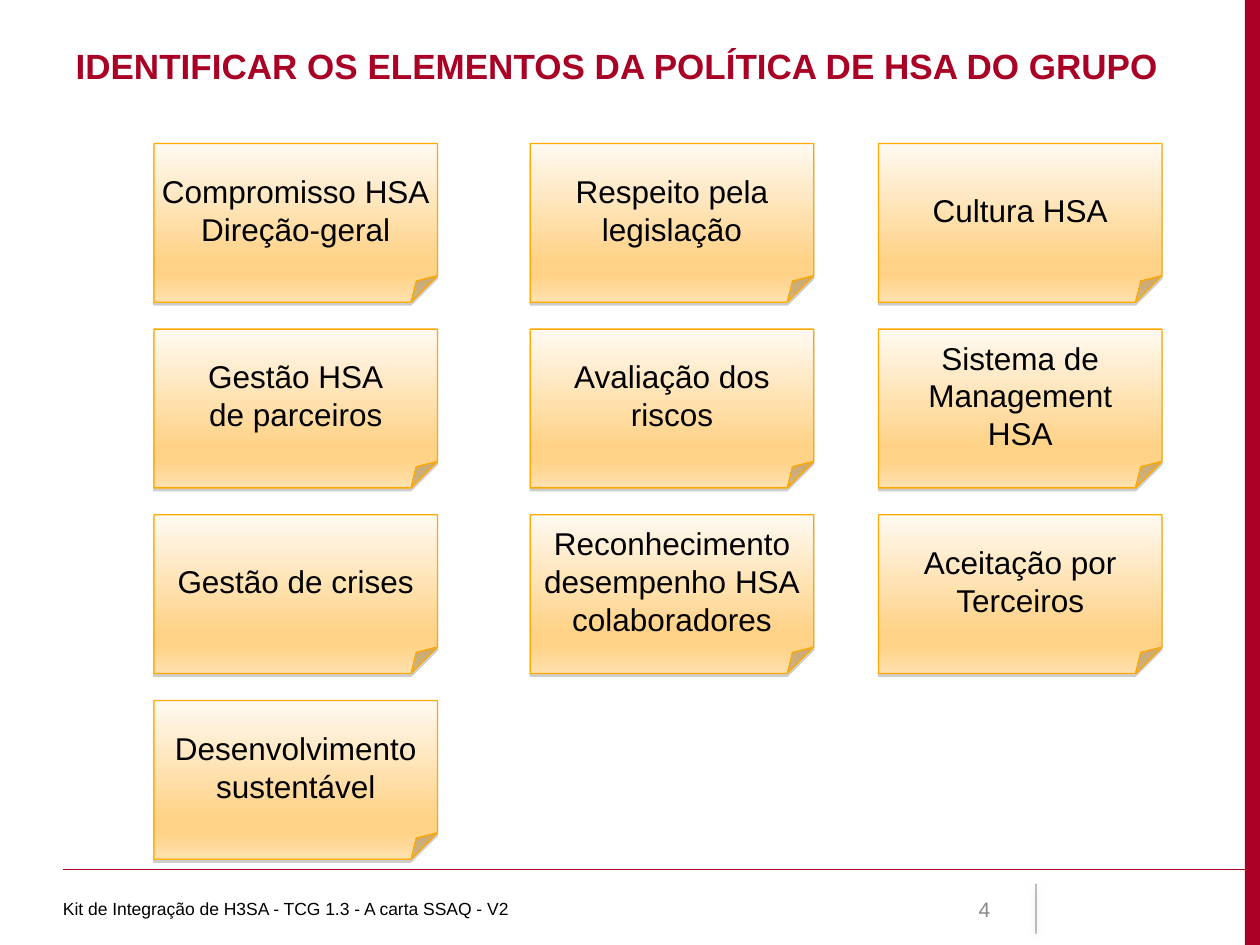
from lxml import etree
from pptx import Presentation
from pptx import util as u
from pptx.dml.color import RGBColor
from pptx.enum import shapes, text
from pptx.oxml.ns import qn

COLORS = {
    "crimson": "AA0025", "title": "A90025", "black": "000000", "gray": "898989",
    "amber": "FFAA00", "shadow": "808080",
    "cream": "FFFAF2", "apricot": "FFD287", "peach": "FFE1AF",
}
NOTE_GRADIENT = [(0, "cream"), (74, "apricot"), (83, "apricot"), (100, "peach")]
COLUMNS = (88, 303, 502)
TOP, ROW_STEP = 82, 106.1
NOTE_SIZE = (162, 90.7)
POLICY_ELEMENTS = [
    ["Compromisso HSA\nDireção-geral", "Respeito pela\vlegislação", "Cultura HSA"],
    ["Gestão HSA\nde parceiros", "Avaliação dos riscos", "Sistema de Management\nHSA"],
    ["Gestão de crises", "Reconhecimento desempenho HSA\ncolaboradores",
     "Aceitação por\vTerceiros"],
    ["Desenvolvimento sustentável"],
]


def rgb(name):
    return RGBColor.from_string(COLORS[name])


def add_color(parent, name, alpha=None):
    color = etree.SubElement(parent, qn("a:srgbClr"), val=COLORS[name])
    if alpha is not None:
        etree.SubElement(color, qn("a:alpha"), val=str(alpha * 1000))


def write(frame, content, size=18, color="black", bold=False,
          align=text.PP_ALIGN.LEFT, anchor=text.MSO_ANCHOR.MIDDLE,
          insets=(7.2, 3.6, 7.2, 3.6)):
    frame.word_wrap = True
    frame.auto_size = text.MSO_AUTO_SIZE.NONE
    frame.vertical_anchor = anchor
    (frame.margin_left, frame.margin_top,
     frame.margin_right, frame.margin_bottom) = map(u.Pt, insets)
    frame.text = content
    for paragraph in frame.paragraphs:
        paragraph.alignment = align
        font = paragraph.font
        font.name, font.size, font.bold = "Arial", u.Pt(size), bold
        font.color.rgb = rgb(color)


class SlideBuilder:
    def __init__(self, slide):
        self.slide = slide

    def title(self, content, *box):
        heading = self.slide.shapes.title
        heading.left, heading.top, heading.width, heading.height = map(u.Pt, box)
        write(heading.text_frame, content, size=20, color="title", bold=True,
              anchor=text.MSO_ANCHOR.TOP)

    def label(self, content, *box, **style):
        caption = self.slide.shapes.add_textbox(*map(u.Pt, box))
        write(caption.text_frame, content, **style)

    def band(self, color, *box):
        strip = self.slide.shapes.add_shape(
            shapes.MSO_SHAPE.RECTANGLE, *map(u.Pt, box))
        strip.shadow.inherit = False
        strip.fill.solid()
        strip.fill.fore_color.rgb = rgb(color)
        strip.line.fill.background()

    def shadow(self, properties, color, blur=0):
        effects = etree.SubElement(properties, qn("a:effectLst"))
        outer = etree.SubElement(
            effects, qn("a:outerShdw"), blurRad=str(u.Pt(blur)),
            dist=str(u.Pt(1.6)), dir="5400000", rotWithShape="0")
        add_color(outer, color, 38)

    def rule(self, color, width, *ends, alpha=None, shadowed=False):
        line = self.slide.shapes.add_connector(
            shapes.MSO_CONNECTOR.STRAIGHT, *map(u.Pt, ends))
        line.line.width = u.Pt(width)
        line.line.color.rgb = rgb(color)
        properties = line.element.spPr
        if alpha is not None:
            stroke = properties.find(".//" + qn("a:ln") + "/" + qn("a:solidFill"))
            stroke.clear()
            add_color(stroke, color, alpha)
        if shadowed:
            self.shadow(properties, color, blur=5)
        else:
            etree.SubElement(properties, qn("a:effectLst"))

    def note(self, content, *box):
        card = self.slide.shapes.add_shape(
            shapes.MSO_SHAPE.FOLDED_CORNER, *map(u.Pt, box))
        card.fill.gradient()
        card.fill.gradient_angle = 270
        properties = card.element.spPr
        stops = properties.find(".//" + qn("a:gsLst"))
        stops.clear()
        for position, color in NOTE_GRADIENT:
            add_color(etree.SubElement(stops, qn("a:gs"), pos=str(position * 1000)), color)
        card.line.color.rgb = rgb("amber")
        card.line.width = u.Pt(0.75)
        self.shadow(properties, "shadow")
        write(card.text_frame, content, align=text.PP_ALIGN.CENTER,
              insets=(0, 2.9, 0, 2.9))


def main():
    deck = Presentation()
    deck.slide_width, deck.slide_height = u.Pt(720), u.Pt(540)
    page = SlideBuilder(deck.slides.add_slide(deck.slide_layouts[5]))

    page.band("crimson", 711.4, 0, 8.6, 540)
    page.rule("crimson", 0.75, 36, 497, 720, 497)
    page.rule("black", 0.5, 592, 505, 592, 533.5, alpha=70, shadowed=True)
    page.title("IDENTIFICAR OS ELEMENTOS DA POLÍTICA DE HSA DO GRUPO",
               36, 21.6, 647.3, 49.7)
    for row, elements in enumerate(POLICY_ELEMENTS):
        for left, element in zip(COLUMNS, elements):
            page.note(element, left, TOP + row * ROW_STEP, *NOTE_SIZE)
    page.label("4", 516, 505, 57, 28.8, size=12, color="gray",
               align=text.PP_ALIGN.RIGHT)
    page.label("Kit de Integração de H3SA - TCG 1.3 - A carta SSAQ - V2",
               36, 505, 438, 28.8, size=10, insets=(0, 3.6, 7.2, 3.6))

    deck.save("out.pptx")


if __name__ == "__main__":
    main()
